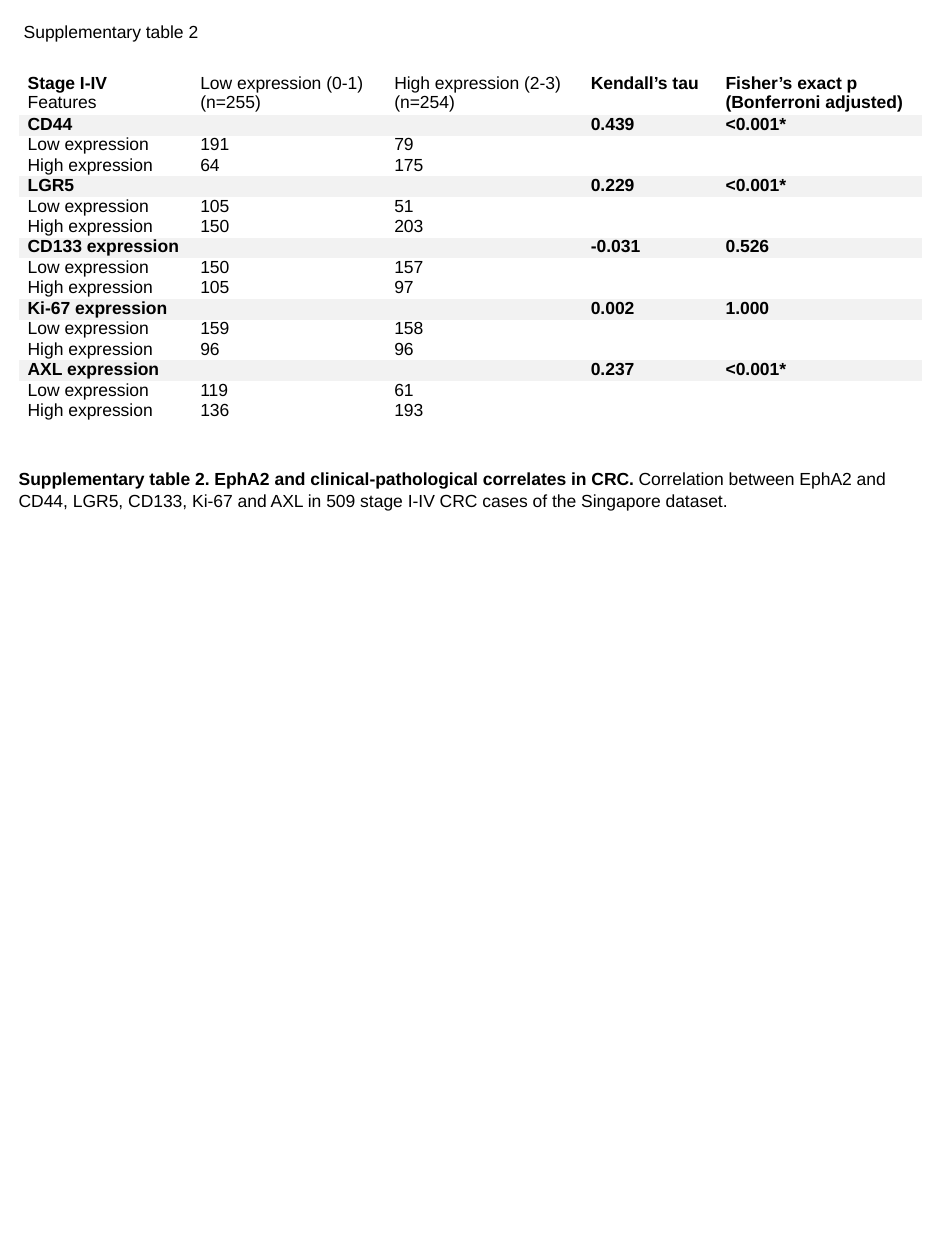
from dataclasses import dataclass

from pptx import Presentation
from pptx.dml.color import RGBColor
from pptx.enum import text
from pptx.oxml import ns
from pptx.util import Inches, Pt
from lxml import etree


@dataclass(frozen=True)
class Theme:
    font: str = "Arial"
    size: Pt = Pt(10)
    ink: RGBColor = RGBColor(0x00, 0x00, 0x00)
    band: RGBColor = RGBColor(0xF2, 0xF2, 0xF2)


theme = Theme()
NO_STYLE = "{2D5ABB26-0587-4C30-8999-92F81FD0307C}"


def add_run(paragraph, words, bold=False):
    run = paragraph.add_run()
    run.text = words
    run.font.name = theme.font
    run.font.size = theme.size
    run.font.bold = bold
    run.font.color.rgb = theme.ink


def fill_cell(cell, lines, band=False):
    """Write (words, bold) lines into a tight cell, shaded for a marker row."""
    cell.margin_left = cell.margin_right = Inches(0.07)
    cell.margin_top = cell.margin_bottom = 0
    if band:
        cell.fill.solid()
        cell.fill.fore_color.rgb = theme.band
    else:
        cell.fill.background()
    frame = cell.text_frame
    for number, (words, bold) in enumerate(lines):
        paragraph = frame.add_paragraph() if number else frame.paragraphs[0]
        paragraph.line_spacing = 0.97
        add_run(paragraph, words, bold)
    if not lines:
        # The end mark keeps an empty cell as low as its row
        end_mark = etree.SubElement(frame.paragraphs[0]._p, ns.qn("a:endParaRPr"))
        end_mark.set("sz", "800")


presentation = Presentation()
presentation.slide_width = Inches(7.5)
presentation.slide_height = Inches(10)
slide = presentation.slides.add_slide(presentation.slide_layouts[6])

# Page heading
heading = slide.shapes.add_textbox(Inches(0.09), Inches(0.12), Inches(1.6), Inches(0.27))
heading.text_frame.word_wrap = False
heading.text_frame.auto_size = text.MSO_AUTO_SIZE.SHAPE_TO_FIT_TEXT
add_run(heading.text_frame.paragraphs[0], "Supplementary table 2")

# Table content
header = [
    [("Stage I-IV", True), ("Features", False)],
    [("Low expression (0-1)", False), ("(n=255)", False)],
    [("High expression (2-3)", False), ("(n=254)", False)],
    [("Kendall’s tau", True)],
    [("Fisher’s exact p (Bonferroni adjusted)", True)],
]
# marker, tau, p, counts for low expression, counts for high expression
markers = [
    ("CD44", "0.439", "<0.001*", ("191", "79"), ("64", "175")),
    ("LGR5", "0.229", "<0.001*", ("105", "51"), ("150", "203")),
    ("CD133 expression", "-0.031", "0.526", ("150", "157"), ("105", "97")),
    ("Ki-67 expression", "0.002", "1.000", ("159", "158"), ("96", "96")),
    ("AXL expression", "0.237", "<0.001*", ("119", "61"), ("136", "193")),
]
body = []
for marker, tau, p_value, low, high in markers:
    body.append((True, (marker, "", "", tau, p_value)))
    body.append((False, ("Low expression", *low, "", "")))
    body.append((False, ("High expression", *high, "", "")))

# Table grid
column_widths = [1.37, 1.54, 1.56, 1.07, 1.63]
header_height, body_height = 0.31, 2.33
table = slide.shapes.add_table(
    len(body) + 1, len(column_widths), Inches(0.15), Inches(0.59),
    Inches(sum(column_widths)), Inches(header_height + body_height)).table
table.first_row = table.horz_banding = False
table._tbl.tblPr.find(ns.qn("a:tableStyleId")).text = NO_STYLE
for column, width in zip(table.columns, column_widths):
    column.width = Inches(width)
for row in table.rows:
    row.height = Inches(body_height / len(body))
table.rows[0].height = Inches(header_height)

# Table cells
for cell, lines in zip(table.rows[0].cells, header):
    fill_cell(cell, lines)
for row_number, (is_marker, values) in enumerate(body, start=1):
    for cell, value in zip(table.rows[row_number].cells, values):
        fill_cell(cell, [(value, is_marker)] if value else [], is_marker)

# Caption
caption = slide.shapes.add_textbox(Inches(0.05), Inches(3.66), Inches(7.4), Inches(0.61))
caption.text_frame.word_wrap = True
paragraph = caption.text_frame.paragraphs[0]
paragraph.line_spacing = 1.05
add_run(paragraph, "Supplementary table 2. EphA2 and clinical-pathological correlates in CRC. ", True)
add_run(paragraph, "Correlation between EphA2 and CD44, LGR5, CD133, Ki-67 and AXL "
                   "in 509 stage I-IV CRC cases of the Singapore dataset.")

presentation.save("out.pptx")
